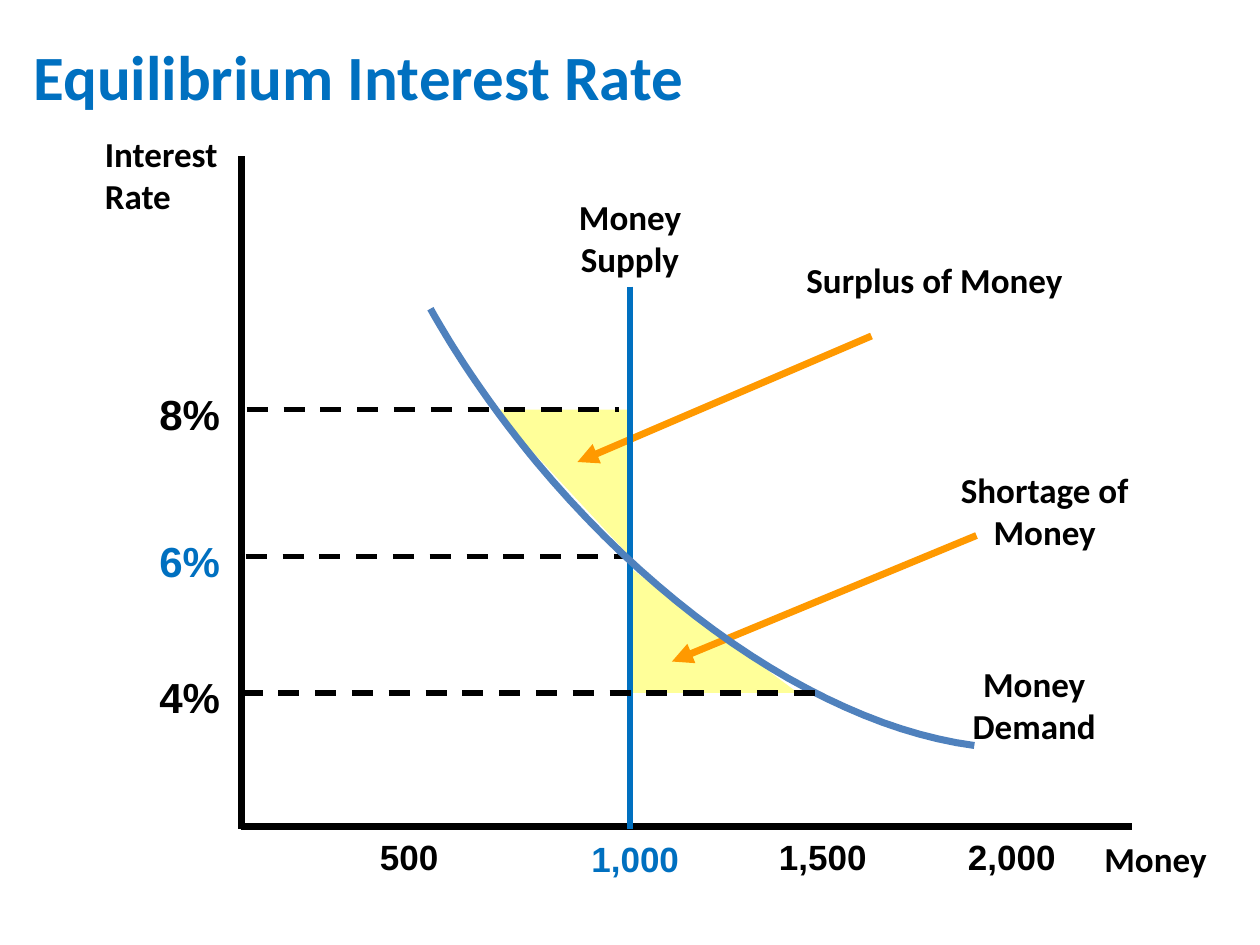
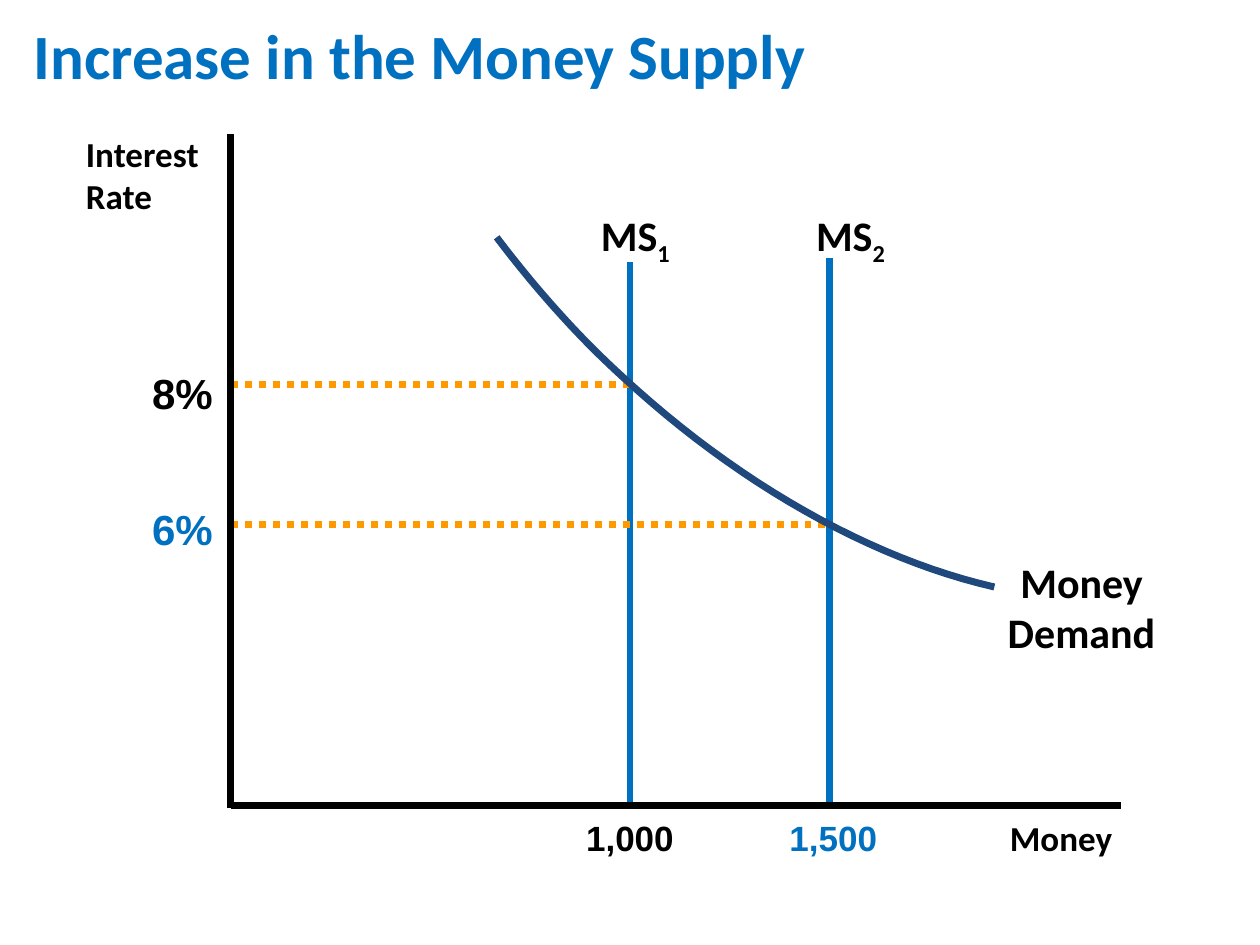
from dataclasses import dataclass
from typing import NamedTuple

from lxml import etree
from pptx import Presentation
from pptx.dml.color import RGBColor
from pptx.enum import dml, shapes, text
from pptx.oxml.ns import qn
from pptx.util import Emu, Inches, Pt

# Grid of 120 columns by 90 rows, each a twelfth of an inch
WIDE, HIGH = Inches(10), Inches(7.5)
COLS, ROWS = 120, 90


@dataclass(frozen=True)
class Theme:
    black: str = "000000"
    white: str = "FFFFFF"
    blue: str = "0070C0"
    orange: str = "FF9900"
    yellow: str = "FFFF99"
    steel: str = "4F81BD"
    navy: str = "1F497D"
    words: str = "Calibri"
    digits: str = "Arial"
    title: int = 36
    large: int = 24
    small: int = 20
    thick: int = 4
    thin: int = 3


T = Theme()


class Box(NamedTuple):
    col: float
    row: float
    wide: float
    high: float


class Spot(NamedTuple):
    col: float
    row: float


class Label(NamedTuple):
    text: str
    box: Box
    style: dict


class Level(NamedTuple):
    text: str
    label: Spot
    row: float
    start: float
    end: float
    color: str


def x(col: float) -> Emu:
    return Emu(round(WIDE * col / COLS))


def y(row: float) -> Emu:
    return Emu(round(HIGH * row / ROWS))


def place(box: Box) -> tuple:
    return x(box.col), y(box.row), x(box.wide), y(box.high)


def rgb(color: str) -> RGBColor:
    return RGBColor.from_string(color)


# Text
def write(frame, words: str, *, size=T.small, font=T.words, color=T.black,
          center=False, sub="") -> None:
    frame.word_wrap = True
    frame.auto_size = text.MSO_AUTO_SIZE.NONE
    frame.vertical_anchor = text.MSO_ANCHOR.TOP
    para = frame.paragraphs[0]
    para.alignment = text.PP_ALIGN.CENTER if center else text.PP_ALIGN.LEFT
    for part in filter(None, (words, sub)):
        run = para.add_run()
        run.text = part
        run.font.size, run.font.name, run.font.bold = Pt(size), font, True
        run.font.color.rgb = rgb(color)
    if sub:
        run._r.get_or_add_rPr().set("baseline", "-25000")


def label(slide, words: str, box: Box, **style):
    shape = slide.shapes.add_textbox(*place(box))
    write(shape.text_frame, words, **style)
    return shape


def start(deck, words: str, box: Box):
    slide = deck.slides.add_slide(deck.slide_layouts[5])
    title = slide.shapes.title
    title.left, title.top, title.width, title.height = place(box)
    title.fill.solid()
    title.fill.fore_color.rgb = rgb(T.white)
    write(title.text_frame, words, size=T.title, color=T.blue)
    return slide


# Lines and shapes
def line(slide, a: Spot, b: Spot, color=T.black, width=T.thick,
         dash=None, arrow=False):
    link = slide.shapes.add_connector(
        shapes.MSO_CONNECTOR.STRAIGHT, x(a.col), y(a.row), x(b.col), y(b.row))
    link.line.color.rgb = rgb(color)
    link.line.width = Pt(width)
    if dash:
        link.line.dash_style = dash
    if arrow:
        etree.SubElement(link.get_or_add_ln(), qn("a:tailEnd"), type="triangle")
    etree.SubElement(link._element.spPr, qn("a:effectLst"))
    return link


def wedge(slide, box: Box, turn: float = 0) -> None:
    shape = slide.shapes.add_shape(
        shapes.MSO_SHAPE.RIGHT_TRIANGLE, *place(box))
    shape.rotation = turn
    shape.shadow.inherit = False
    shape.fill.solid()
    shape.fill.fore_color.rgb = rgb(T.yellow)
    shape.line.fill.background()


def bezier(a: Spot, b: Spot, c: Spot, d: Spot, steps: int = 24) -> list:
    def at(t: float, p, q, r, s) -> float:
        u = 1 - t
        return u**3 * p + 3 * u * u * t * q + 3 * u * t * t * r + t**3 * s
    return [Spot(*(at(i / steps, *axis) for axis in zip(a, b, c, d)))
            for i in range(1, steps + 1)]


def curve(slide, color: str, knots: list) -> None:
    spots = [Spot(*knot) for knot in knots]
    points = bezier(*spots[:4]) + bezier(*spots[3:])
    pen = slide.shapes.build_freeform(x(spots[0].col), y(spots[0].row))
    pen.add_line_segments([(x(p.col), y(p.row)) for p in points], close=False)
    shape = pen.convert_to_shape()
    shape.shadow.inherit = False
    shape.fill.background()
    shape.line.color.rgb = rgb(color)
    shape.line.width = Pt(T.thick)


# Graph parts
def axes(slide, corner: Spot, top: float, right: float) -> None:
    line(slide, Spot(corner.col, top), Spot(corner.col, corner.row + 0.3))
    line(slide, corner, Spot(right, corner.row))


def level(slide, item: Level, color: str, width: int, dash) -> None:
    label(slide, item.text, Box(*item.label, 10, 5.6), size=T.large,
          font=T.digits, color=item.color)
    line(slide, Spot(item.start, item.row), Spot(item.end, item.row),
         color, width, dash)


def labels(slide, items: list) -> None:
    for item in items:
        label(slide, item.text, item.box, **item.style)


NUM = dict(font=T.digits)
MID = dict(center=True)
BLUE = dict(color=T.blue)


def balance(deck) -> None:
    slide = start(deck, "Equilibrium Interest Rate", Box(2, 3, 94, 8.5))
    dash = (T.black, T.thin, dml.MSO_LINE.DASH)
    level(slide, Level("6%", Spot(14, 50.4), 53, 23.4, 59.9, T.blue), *dash)

    # Surplus and shortage
    wedge(slide, Box(47, 39, 13, 14), 180)
    wedge(slide, Box(59.9, 54, 16.1, 12))
    for a, b in ((Spot(83, 32), Spot(55, 44)), (Spot(93, 51), Spot(64, 63))):
        line(slide, a, b, T.orange, arrow=True)

    # Axes, supply and demand
    axes(slide, Spot(23, 78.7), 14.9, 107.8)
    name = label(slide, "Money Supply", Box(52, 18, 16, 9.3), center=True)
    supply = line(slide, Spot(60, 27.3), Spot(60, 79), T.blue)
    supply.begin_connect(name, 2)
    labels(slide, [
        Label("500", Box(35, 79, 12, 4.8), NUM),
        Label("1,000", Box(52, 79.2, 17, 4.8), NUM | MID | BLUE),
        Label("1,500", Box(73, 79, 16, 4.8), NUM),
        Label("2,000", Box(91, 79, 16, 4.8), NUM),
        Label("Money", Box(104, 79.2, 14, 5.3), {}),
        Label("Interest Rate", Box(8.8, 12, 15.2, 9.3), {}),
        Label("Surplus of Money", Box(75, 24, 28, 5.3), MID),
        Label("Shortage of Money", Box(87, 44, 25, 9.3), MID),
        Label("Money Demand", Box(90, 62.5, 17, 9.3), MID),
    ])
    curve(slide, T.steel, [
        (92.8, 71), (79.2, 69.2), (63.5, 58.9), (51.1, 44),
        (47.3, 39.4), (43.8, 34.4), (41, 29.4)])
    for item in (Level("8%", Spot(14, 36.4), 39, 23.5, 59, T.black),
                 Level("4%", Spot(14, 63.4), 66, 23, 78.5, T.black)):
        level(slide, item, *dash)


def growth(deck) -> None:
    slide = start(deck, "Increase in the Money Supply", Box(2, 1, 91, 8.5))

    # Supply before and after
    line(slide, Spot(60, 25), Spot(60, 77), T.blue)
    line(slide, Spot(79, 24.6), Spot(79, 76.7), T.blue)
    big = dict(size=T.large, center=True)
    labels(slide, [
        Label("MS", Box(52, 19.4, 17, 6), big | dict(sub="1")),
        Label("MS", Box(72, 19.4, 18, 6), big | dict(sub="2")),
        Label("1,000", Box(51, 77.2, 18, 4.8), NUM | MID),
        Label("1,500", Box(74, 77.2, 14, 4.8), NUM | BLUE),
        Label("Money", Box(95, 77.2, 14, 5.3), {}),
        Label("Interest Rate", Box(7, 12, 15.2, 9.3), {}),
        Label("Money Demand", Box(93, 52.4, 20, 11), big),
    ])

    # Rates, axes and demand
    for item in (Level("8%", Spot(13.3, 34.4), 36.6, 22, 60, T.black),
                 Level("6%", Spot(13.3, 47.4), 50, 22, 79, T.blue)):
        level(slide, item, T.orange, T.thick, dml.MSO_LINE.ROUND_DOT)
    axes(slide, Spot(22, 76.7), 12.8, 106.8)
    curve(slide, T.navy, [
        (94.7, 55.9), (82.9, 53.2), (70.2, 46), (59.2, 35.8),
        (54.7, 31.7), (50.8, 27.2), (47.3, 22.6)])


def main() -> None:
    deck = Presentation()
    deck.slide_width, deck.slide_height = WIDE, HIGH
    balance(deck)
    growth(deck)
    deck.save("out.pptx")


if __name__ == "__main__":
    main()
